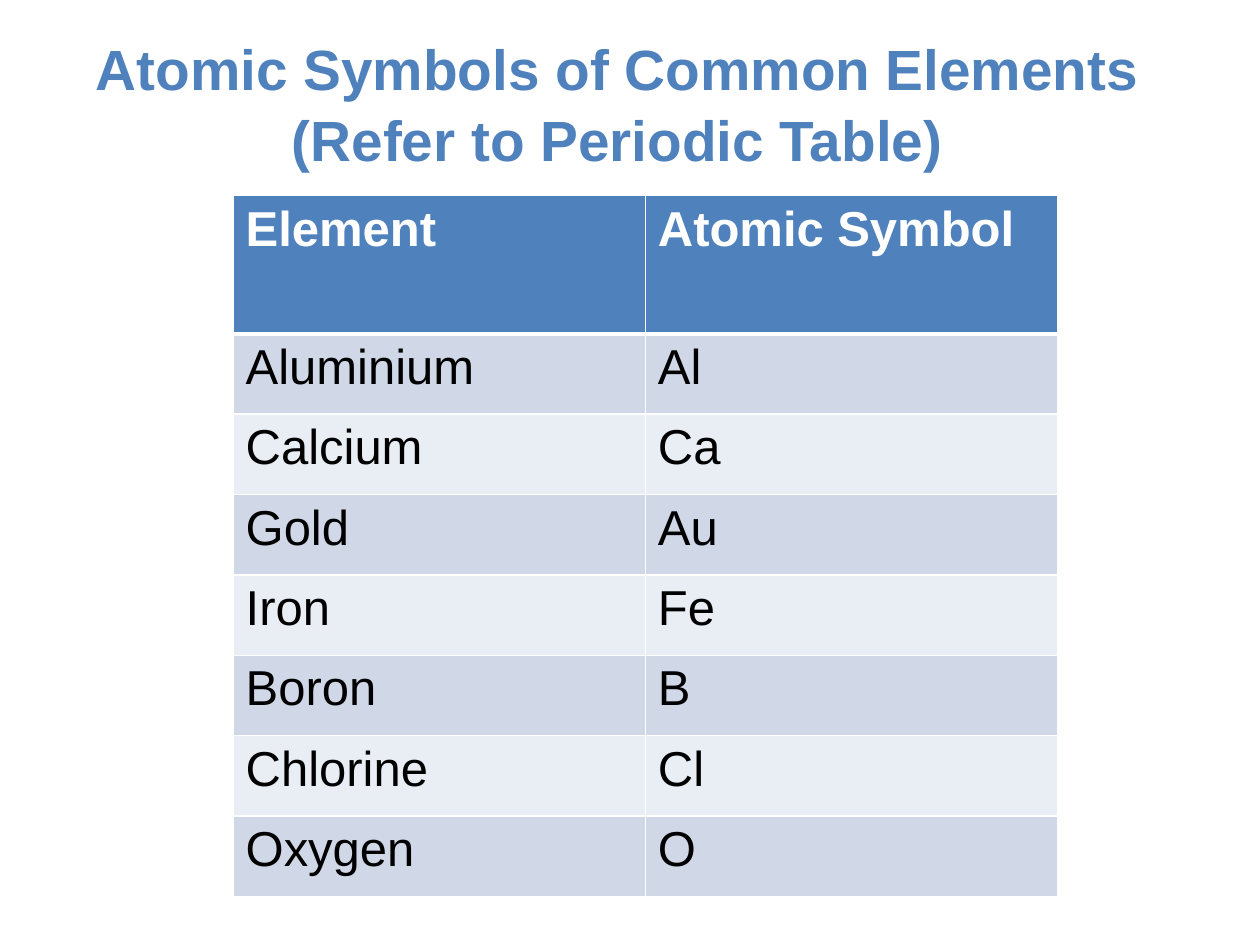
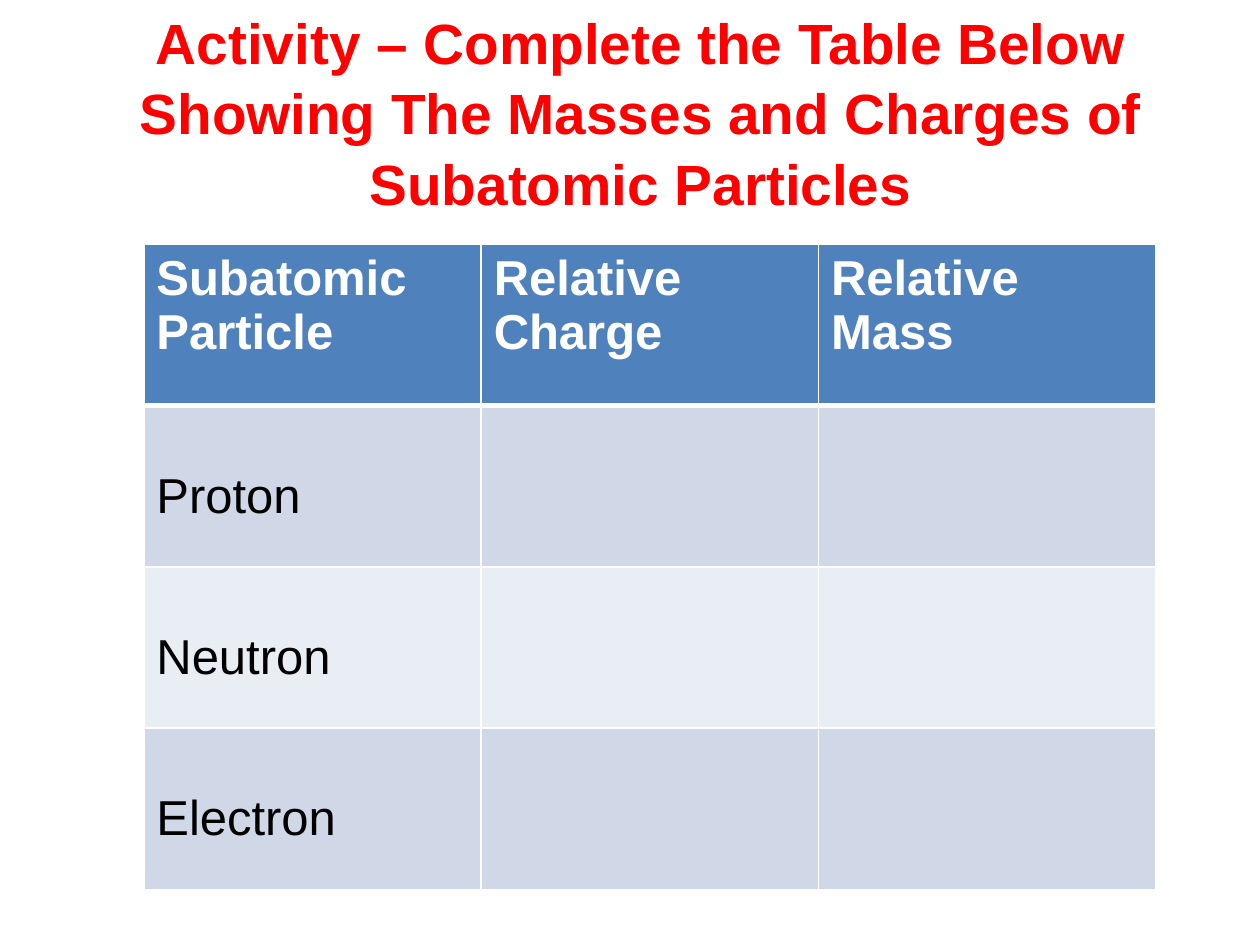
from lxml import etree
from pptx import Presentation
from pptx.dml.color import RGBColor
from pptx.enum.text import MSO_ANCHOR, PP_ALIGN
from pptx.oxml.ns import qn
from pptx.util import Cm, Pt

CENTER = PP_ALIGN.CENTER
MIDDLE = MSO_ANCHOR.MIDDLE

FONT = "Arial"
TITLE_SIZE = 32.4
TABLE_SIZE = 28
BLUE, RED, WHITE, BLACK = "4F81BD", "FF0000", "FFFFFF", "000000"
BANDS = ("D0D8E8", "E9EDF4")
THIN, THICK = 1, 3
LOWERED_MARGIN = 1.27

ELEMENTS = [
    ("Element", "Atomic Symbol"),
    ("Aluminium", "Al"),
    ("Calcium", "Ca"),
    ("Gold", "Au"),
    ("Iron", "Fe"),
    ("Boron", "B"),
    ("Chlorine", "Cl"),
    ("Oxygen", "O"),
]
PARTICLES = [
    ("Subatomic Particle", "Relative Charge", "Relative Mass"),
    ("Proton", "", ""),
    ("Neutron", "", ""),
    ("Electron", "", ""),
]


def color(hex_string):
    return RGBColor.from_string(hex_string)


class Deck:
    """Holds the presentation, its shared style and the current slide."""

    def __init__(self):
        self.presentation = Presentation()
        self.presentation.slide_width = Cm(25.4)
        self.presentation.slide_height = Cm(19.05)
        self.slide = None

    def add_slide(self):
        blank_layout = self.presentation.slide_layouts[6]
        self.slide = self.presentation.slides.add_slide(blank_layout)

    def format_text(self, text_frame, size, hex_color, bold):
        for paragraph in text_frame.paragraphs:
            for run in paragraph.runs:
                run.font.name = FONT
                run.font.size = Pt(size)
                run.font.bold = bold
                run.font.color.rgb = color(hex_color)

    def add_title(self, text, left, top, width, height, hex_color):
        shape = self.slide.shapes.add_textbox(Cm(left), Cm(top), Cm(width), Cm(height))
        text_frame = shape.text_frame
        text_frame.word_wrap = True
        text_frame.vertical_anchor = MIDDLE
        text_frame.text = text
        paragraph = text_frame.paragraphs[0]
        paragraph.alignment = CENTER
        paragraph.line_spacing = 1.04
        self.format_text(text_frame, TITLE_SIZE, hex_color, True)

    def add_borders(self, cell, top, bottom):
        """Draw white cell borders; top and bottom are widths in points."""
        properties = cell._tc.get_or_add_tcPr()
        widths = {"a:lnL": THIN, "a:lnR": THIN, "a:lnT": top, "a:lnB": bottom}
        for tag, width in widths.items():
            line = etree.SubElement(properties, qn(tag), w=str(Pt(width)))
            fill = etree.SubElement(line, qn("a:solidFill"))
            etree.SubElement(fill, qn("a:srgbClr"), val=WHITE)

    def add_table(self, rows, left, top, column_width, row_heights, body_margin=None):
        """Add a banded table; body_margin is the top margin below the header."""
        column_count = len(rows[0])
        frame = self.slide.shapes.add_table(
            len(rows), column_count, Cm(left), Cm(top),
            Cm(column_width * column_count), Cm(sum(row_heights)))
        table = frame.table
        for column in table.columns:
            column.width = Cm(column_width)
        for row_index, texts in enumerate(rows):
            table.rows[row_index].height = Cm(row_heights[row_index])
            is_header = row_index == 0
            for column_index, text in enumerate(texts):
                cell = table.cell(row_index, column_index)
                self.add_borders(cell, THICK if row_index == 1 else THIN,
                                 THICK if is_header else THIN)
                cell.fill.solid()
                band = BLUE if is_header else BANDS[(row_index - 1) % 2]
                cell.fill.fore_color.rgb = color(band)
                if body_margin and not is_header:
                    cell.margin_top = Cm(body_margin)
                if text:
                    cell.text_frame.text = text
                    self.format_text(cell.text_frame, TABLE_SIZE,
                                     WHITE if is_header else BLACK, is_header)


def add_symbols_slide(deck):
    deck.add_slide()
    deck.add_title("Atomic Symbols of Common Elements\v(Refer to Periodic Table)",
                   0.05, 0.74, 24.79, 2.62, BLUE)
    row_heights = [2.79] + [1.62] * (len(ELEMENTS) - 1)
    deck.add_table(ELEMENTS, 4.7, 3.94, 8.31, row_heights)


def add_activity_slide(deck):
    deck.add_slide()
    deck.add_title("Activity – Complete the Table Below Showing The Masses "
                   "and Charges of Subatomic Particles",
                   0.71, 0.33, 24.41, 3.81, RED)
    row_heights = [3.25] * len(PARTICLES)
    deck.add_table(PARTICLES, 2.9, 4.93, 6.8, row_heights, LOWERED_MARGIN)


def main():
    deck = Deck()
    add_symbols_slide(deck)
    add_activity_slide(deck)
    deck.presentation.save("out.pptx")


if __name__ == "__main__":
    main()
